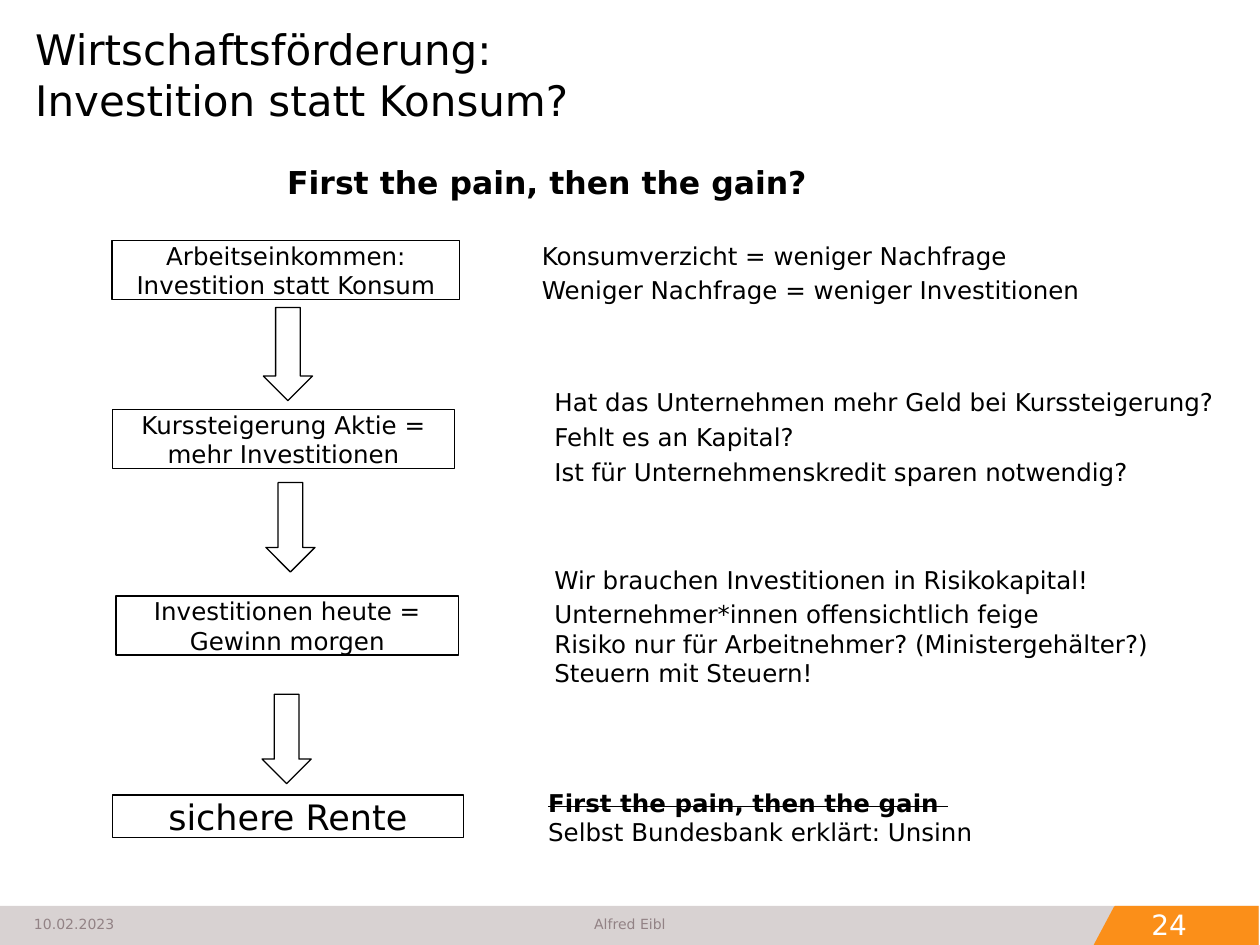
from pptx import Presentation
from pptx.dml.color import RGBColor
from pptx.enum.shapes import MSO_SHAPE
from pptx.enum.text import MSO_ANCHOR, PP_ALIGN
from pptx.util import Inches, Pt

BLACK = RGBColor(0x00, 0x00, 0x00)
WHITE = RGBColor(0xFF, 0xFF, 0xFF)
ORANGE = RGBColor(0xFB, 0x8F, 0x19)
LIGHT_GREY = RGBColor(0xD8, 0xD2, 0xD2)
TEXT_GREY = RGBColor(0x92, 0x82, 0x85)
FONT = "DejaVu Sans"

deck = Presentation()
deck.slide_width = Inches(10)
deck.slide_height = Inches(7.5)
slide = deck.slides.add_slide(deck.slide_layouts[6])


def add_block(preset, left, top, width, height, fill=None, line=None):
    block = slide.shapes.add_shape(
        preset, Inches(left), Inches(top), Inches(width), Inches(height))
    block.shadow.inherit = False
    if fill is None:
        block.fill.background()
    else:
        block.fill.solid()
        block.fill.fore_color.rgb = fill
    if line is None:
        block.line.fill.background()
    else:
        block.line.color.rgb = line
        block.line.width = Pt(0.75)
    return block


def write(holder, paragraphs, size, color=BLACK, align=PP_ALIGN.LEFT,
          anchor=MSO_ANCHOR.MIDDLE, bold_first=False, strike_first=False):
    frame = holder.text_frame
    frame.word_wrap = True
    frame.vertical_anchor = anchor
    frame.margin_left = frame.margin_right = 0
    frame.margin_top = frame.margin_bottom = 0
    for number, lines in enumerate(paragraphs):
        paragraph = frame.add_paragraph() if number else frame.paragraphs[0]
        paragraph.alignment = align
        paragraph.space_after = Pt(3)
        for position, line in enumerate(lines):
            if position:
                paragraph.add_line_break()
            run = paragraph.add_run()
            run.text = line
            run.font.name = FONT
            run.font.size = Pt(size)
            run.font.color.rgb = color
            first = number == position == 0
            run.font.bold = bold_first and first
            if strike_first and first:
                run.font._element.set("strike", "sngStrike")


add_block(MSO_SHAPE.RECTANGLE, -0.01, 7.19, 10, 0.31, fill=LIGHT_GREY)
add_block(MSO_SHAPE.RECTANGLE, 8.85, 7.19, 1.14, 0.31, fill=ORANGE)
add_block(MSO_SHAPE.ISOSCELES_TRIANGLE, 8.68, 7.19, 0.33, 0.31, fill=ORANGE)

title = slide.shapes.add_textbox(Inches(0.28), Inches(0.21), Inches(7.9), Inches(0.78))
write(title, [["Wirtschaftsförderung:", "Investition statt Konsum?"]], 24,
      anchor=MSO_ANCHOR.BOTTOM)
title.text_frame.paragraphs[0].space_after = Pt(0)

footers = [
    ("10.02.2023", 0.27, 0.8, 8, TEXT_GREY, PP_ALIGN.LEFT),
    ("Alfred Eibl", 4.6, 0.8, 8, TEXT_GREY, PP_ALIGN.CENTER),
    ("24", 9.02, 0.4, 16, WHITE, PP_ALIGN.RIGHT),
]
for words, left, width, size, color, align in footers:
    footer = slide.shapes.add_textbox(Inches(left), Inches(7.17), Inches(width), Inches(0.33))
    write(footer, [[words]], size, color, align)

steps = [
    (["Arbeitseinkommen:", "Investition statt Konsum"], 0.89, 1.91, 2.76, 0.47, 14),
    (["Kurssteigerung Aktie = mehr Investitionen"], 0.89, 3.25, 2.72, 0.47, 14),
    (["Investitionen heute =", "Gewinn morgen"], 0.92, 4.73, 2.72, 0.47, 14),
    (["sichere Rente"], 0.89, 6.31, 2.79, 0.34, 20),
]
for lines, left, top, width, height, size in steps:
    step = add_block(MSO_SHAPE.RECTANGLE, left, top, width, height, line=BLACK)
    write(step, [lines], size, align=PP_ALIGN.CENTER)

for left, top, height in [(2.09, 2.44, 0.74), (2.11, 3.83, 0.71), (2.08, 5.51, 0.71)]:
    add_block(MSO_SHAPE.DOWN_ARROW, left, top, 0.39, height, line=BLACK)

comments = [
    ([["First the pain, then the gain?"]], 2.28, 1.29, 4.3, 0.3, 18, True, False),
    ([["Konsumverzicht = weniger Nachfrage"],
      ["Weniger Nachfrage = weniger Investitionen"]],
     4.3, 1.91, 4.47, 0.51, 14, False, False),
    ([["Hat das Unternehmen mehr Geld bei Kurssteigerung?"],
      ["Fehlt es an Kapital?"],
      ["Ist für Unternehmenskredit sparen notwendig?"]],
     4.4, 3.07, 5.33, 0.79, 14, False, False),
    ([["Wir brauchen Investitionen in Risikokapital!"],
      ["Unternehmer*innen offensichtlich feige",
       "Risiko nur für Arbeitnehmer? (Ministergehälter?)",
       "Steuern mit Steuern!"]],
     4.4, 4.48, 5.6, 0.98, 14, False, False),
    ([["First the pain, then the gain ", "Selbst Bundesbank erklärt: Unsinn"]],
     4.35, 6.25, 5.45, 0.47, 14, True, True),
]
for paragraphs, left, top, width, height, size, bold, strike in comments:
    comment = slide.shapes.add_textbox(
        Inches(left), Inches(top), Inches(width), Inches(height))
    write(comment, paragraphs, size, bold_first=bold, strike_first=strike)

deck.save("out.pptx")
